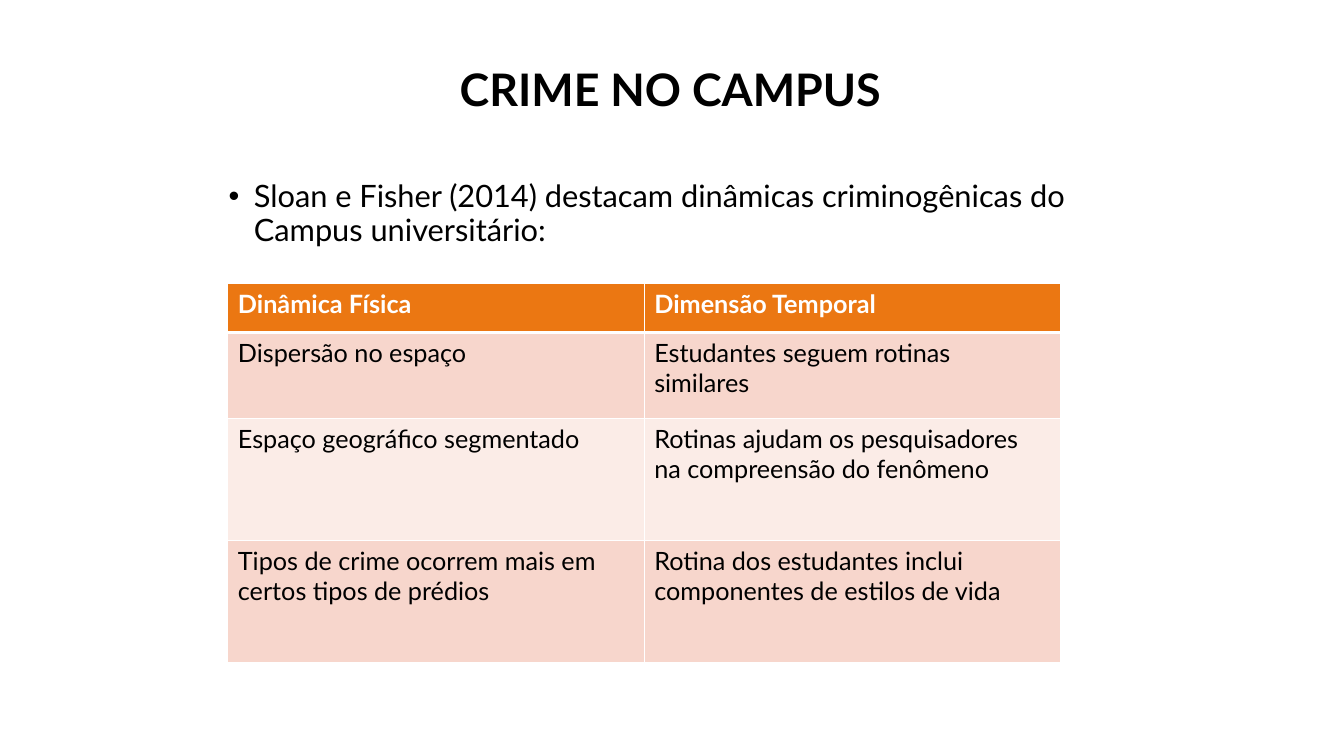
from lxml.etree import SubElement
from pptx import Presentation
from pptx.dml.color import RGBColor
from pptx.enum.text import MSO_ANCHOR, PP_ALIGN
from pptx.oxml.ns import qn
from pptx.util import Inches, Pt

BLACK = RGBColor(0x00, 0x00, 0x00)
WHITE = RGBColor(0xFF, 0xFF, 0xFF)
ORANGE = RGBColor(0xEB, 0x77, 0x12)
ROSE = RGBColor(0xF7, 0xD6, 0xCC)
BLUSH = RGBColor(0xFB, 0xEC, 0xE7)
FONT = "Lato"
ROWS = [
    ("Dinâmica Física", "Dimensão Temporal"),
    ("Dispersão no espaço", "Estudantes seguem rotinas similares"),
    ("Espaço geográfico segmentado",
     "Rotinas ajudam os pesquisadores na compreensão do fenômeno"),
    ("Tipos de crime ocorrem mais em certos tipos de prédios",
     "Rotina dos estudantes inclui componentes de estilos de vida"),
]


def write(frame, text, size=18, color=BLACK, bold=False,
          align=PP_ALIGN.LEFT, lead=1.0, bullet=None):
    """Write one styled paragraph into a text frame."""
    para = frame.paragraphs[0]
    para.alignment = align
    para.line_spacing = lead
    if bullet:
        props = para._p.get_or_add_pPr()
        props.set("marL", str(Inches(0.25)))
        props.set("indent", str(Inches(-0.25)))
        SubElement(props, qn("a:buFont"), typeface="Arial")
        SubElement(props, qn("a:buChar"), char=bullet)
    run = para.add_run()
    run.text = text
    font = run.font
    font.name, font.size, font.bold = FONT, Pt(size), bold
    font.color.rgb = color


class Deck:
    """Hold the style and the current slide."""

    def __init__(self):
        self.show = Presentation()
        self.show.slide_width = Inches(13.33)
        self.show.slide_height = Inches(7.5)
        self.slide = self.show.slides.add_slide(self.show.slide_layouts[6])

    def text(self, box, words, anchor=MSO_ANCHOR.TOP, **form):
        """Add a wrapped text box."""
        frame = self.slide.shapes.add_textbox(*map(Inches, box)).text_frame
        frame.word_wrap = True
        frame.vertical_anchor = anchor
        write(frame, words, **form)

    def edge(self, cell, side, width):
        """Draw one white border of a cell."""
        props = cell._tc.get_or_add_tcPr()
        line = SubElement(props, qn(f"a:ln{side}"), w=str(Pt(width)))
        fill = SubElement(line, qn("a:solidFill"))
        SubElement(fill, qn("a:srgbClr"), val=str(WHITE))

    def table(self, box, rows, heights):
        """Add a banded table with a header row and equal columns."""
        count = len(rows[0])
        grid = self.slide.shapes.add_table(
            len(rows), count, *map(Inches, box)).table
        for col in grid.columns:
            col.width = Inches(box[2] / count)
        for i, (row, height) in enumerate(zip(rows, heights)):
            grid.rows[i].height = Inches(height)
            head = i == 0
            fill = ORANGE if head else (BLUSH, ROSE)[i % 2]
            edges = {"L": 1, "R": 1, "T": 3 if i == 1 else 1,
                     "B": 3 if head else 1}
            for j, words in enumerate(row):
                cell = grid.cell(i, j)
                for side, width in edges.items():
                    self.edge(cell, side, width)
                cell.fill.solid()
                cell.fill.fore_color.rgb = fill
                write(cell.text_frame, words, bold=head,
                      color=WHITE if head else BLACK)


def main():
    """Build and save the slide."""
    deck = Deck()
    deck.text((1.94, 0.21, 9.42, 1.41), "CRIME NO CAMPUS", MSO_ANCHOR.MIDDLE,
              size=32, bold=True, align=PP_ALIGN.CENTER, lead=0.9)
    deck.text((2.17, 1.75, 8.59, 1.21),
              "Sloan e Fisher (2014) destacam dinâmicas criminogênicas do "
              "Campus universitário:", size=22, lead=0.9, bullet="•")
    deck.table((2.26, 2.81, 8.26, 3.76), ROWS, (0.49, 0.85, 1.21, 1.21))
    deck.show.save("out.pptx")


if __name__ == "__main__":
    main()
